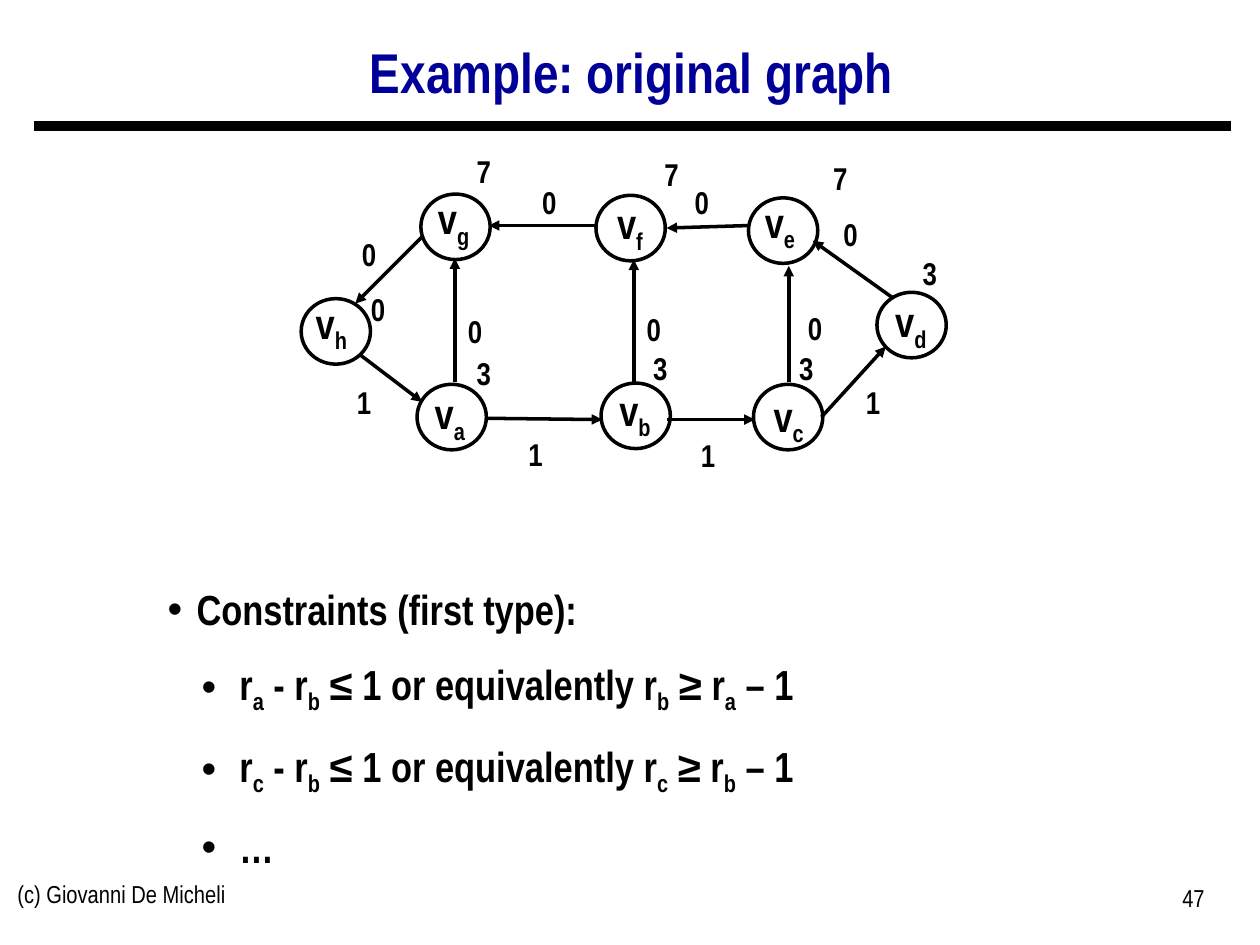
"""Build a slide with a weighted retiming graph and its constraints."""
import pptx
import pptx.dml.color
import pptx.enum.shapes
import pptx.enum.text
import pptx.oxml.ns
import pptx.util
from lxml import etree

Inches, Pt = pptx.util.Inches, pptx.util.Pt
qn = pptx.oxml.ns.qn
ALIGN = pptx.enum.text.PP_ALIGN
COLORS = {"title": "000099", "ink": "000000"}


def write(p, text, size, bold=True, color="ink"):
    """Fill a paragraph, lowering each letter that follows an underscore."""
    first, *rest = text.split("_")
    pieces = [(first, False)]
    for part in rest:
        pieces += [(part[0], True), (part[1:], False)]
    for piece, lowered in pieces:
        if piece:
            r = p.add_run()
            r.text = piece
            r.font.name, r.font.size, r.font.bold = "Arial Narrow", Pt(size), bold
            r.font.color.rgb = pptx.dml.color.RGBColor.from_string(COLORS[color])
            if lowered:
                r._r.get_or_add_rPr().set("baseline", "-25000")


def add_line(start, end, width, arrow=False):
    """Draw a straight line between two points given in inches."""
    ln = s.shapes.add_connector(
        pptx.enum.shapes.MSO_CONNECTOR.STRAIGHT, *map(Inches, start + end))
    ln.line.width = Pt(width)
    ln.line.color.rgb = pptx.dml.color.RGBColor.from_string(COLORS["ink"])
    etree.SubElement(ln._element.spPr, qn("a:effectLst"))
    if arrow:
        etree.SubElement(ln.line._get_or_add_ln(), qn("a:tailEnd"), type="triangle")


prs = pptx.Presentation()
prs.slide_width, prs.slide_height = Inches(10), Inches(7.5)
s = prs.slides.add_slide(prs.slide_layouts[1])

add_line((0.27, 1), (9.77, 1), 6)

title, body = s.shapes.title, s.placeholders[1]
for sp, box, anchor in [
    (title, (0.26, 0.22, 9.51, 0.75), pptx.enum.text.MSO_ANCHOR.MIDDLE),
    (body, (1.23, 4.58, 7.82, 2.3), pptx.enum.text.MSO_ANCHOR.TOP),
]:
    sp.left, sp.top, sp.width, sp.height = map(Inches, box)
    sp.text_frame.vertical_anchor = anchor
    sp.text_frame.auto_size = pptx.enum.text.MSO_AUTO_SIZE.NONE
p = title.text_frame.paragraphs[0]
p.alignment, p.line_spacing = ALIGN.CENTER, 0.9
write(p, "Example: original graph", 32, color="title")

nodes = {
    "g": (3.34, 1.54), "f": (4.73, 1.55), "e": (5.94, 1.57), "h": (2.39, 2.37),
    "d": (6.96, 2.32), "a": (3.31, 3.05), "b": (4.77, 3.04), "c": (5.98, 3.05),
}
for x, y in nodes.values():
    sp = s.shapes.add_shape(
        pptx.enum.shapes.MSO_SHAPE.FLOWCHART_CONNECTOR,
        *map(Inches, (x, y, 0.55, 0.52)))
    sp.shadow.inherit = False
    sp.fill.background()
    sp.line.width = Pt(2)
    sp.line.color.rgb = pptx.dml.color.RGBColor.from_string(COLORS["ink"])

edges = [
    ((3.61, 3.03), (3.61, 2.05)), ((5.03, 3.03), (5.03, 2.06)),
    ((6.26, 3.03), (6.26, 2.11)), ((3.35, 1.88), (2.82, 2.41)),
    ((2.85, 2.81), (3.35, 3.19)), ((3.85, 3.32), (4.78, 3.33)),
    ((5.29, 3.33), (5.99, 3.33)), ((6.52, 3.31), (7.03, 2.75)),
    ((7.08, 2.36), (6.45, 1.91)), ((5.95, 1.79), (5.29, 1.81)),
    ((4.72, 1.79), (3.88, 1.79)),
]
for start, end in edges:
    add_line(start, end, 2, arrow=True)

name_spots = {
    "g": (2.9, 1.48), "f": (4.3, 1.52), "e": (5.49, 1.51), "h": (1.93, 2.31),
    "d": (6.53, 2.3), "a": (2.87, 3.03), "b": (4.34, 3), "c": (5.56, 3.05),
}
node_delays = [
    ("7", 3.54, 1.16), ("7", 5.03, 1.18), ("7", 6.37, 1.21), ("3", 7.08, 1.97),
    ("3", 3.54, 2.76), ("3", 4.94, 2.72), ("3", 6.1, 2.72), ("0", 2.7, 2.25),
]
edge_weights = [
    ("0", 4.06, 1.4), ("0", 5.27, 1.4), ("0", 6.45, 1.66), ("0", 2.63, 1.82),
    ("0", 3.47, 2.43), ("0", 4.89, 2.41), ("0", 6.17, 2.4), ("1", 2.59, 2.99),
    ("1", 3.95, 3.4), ("1", 5.32, 3.41), ("1", 6.63, 2.99),
]
labels = [("v_" + n, (x, y, 1.4, 0.5), 24, True, ALIGN.CENTER)
          for n, (x, y) in name_spots.items()]
labels += [(t, (x, y, 0.6, 0.4), 18, True, ALIGN.CENTER)
           for t, x, y in node_delays + edge_weights]
labels += [
    ("(c) Giovanni De Micheli", (0.04, 6.93, 3.17, 0.52), 14, False, ALIGN.LEFT),
    ("47", (7.33, 6.96, 2.33, 0.52), 14, False, ALIGN.RIGHT),
]
for text, box, size, bold, align in labels:
    tf = s.shapes.add_textbox(*map(Inches, box)).text_frame
    tf.word_wrap = True
    tf.paragraphs[0].alignment = align
    write(tf.paragraphs[0], text, size, bold)

constraints = [
    (0, "Constraints (first type):"),
    (1, "r_a - r_b ≤ 1 or equivalently r_b ≥ r_a – 1"),
    (1, "r_c - r_b ≤ 1 or equivalently r_c ≥ r_b – 1"),
    (1, "…"),
]
indents = [(0.23, -0.23), (0.57, -0.3)]
tf = body.text_frame
for i, (level, text) in enumerate(constraints):
    p = tf.add_paragraph() if i else tf.paragraphs[0]
    p.level = level
    p.space_before = Pt(14 if i else 0)
    pPr = p._p.get_or_add_pPr()
    margin, indent = indents[level]
    pPr.set("marL", str(Inches(margin)))
    pPr.set("indent", str(Inches(indent)))
    etree.SubElement(pPr, qn("a:buFont"), typeface="Arial")
    etree.SubElement(pPr, qn("a:buChar"), char="•")
    write(p, text, 24)

prs.save("out.pptx")
